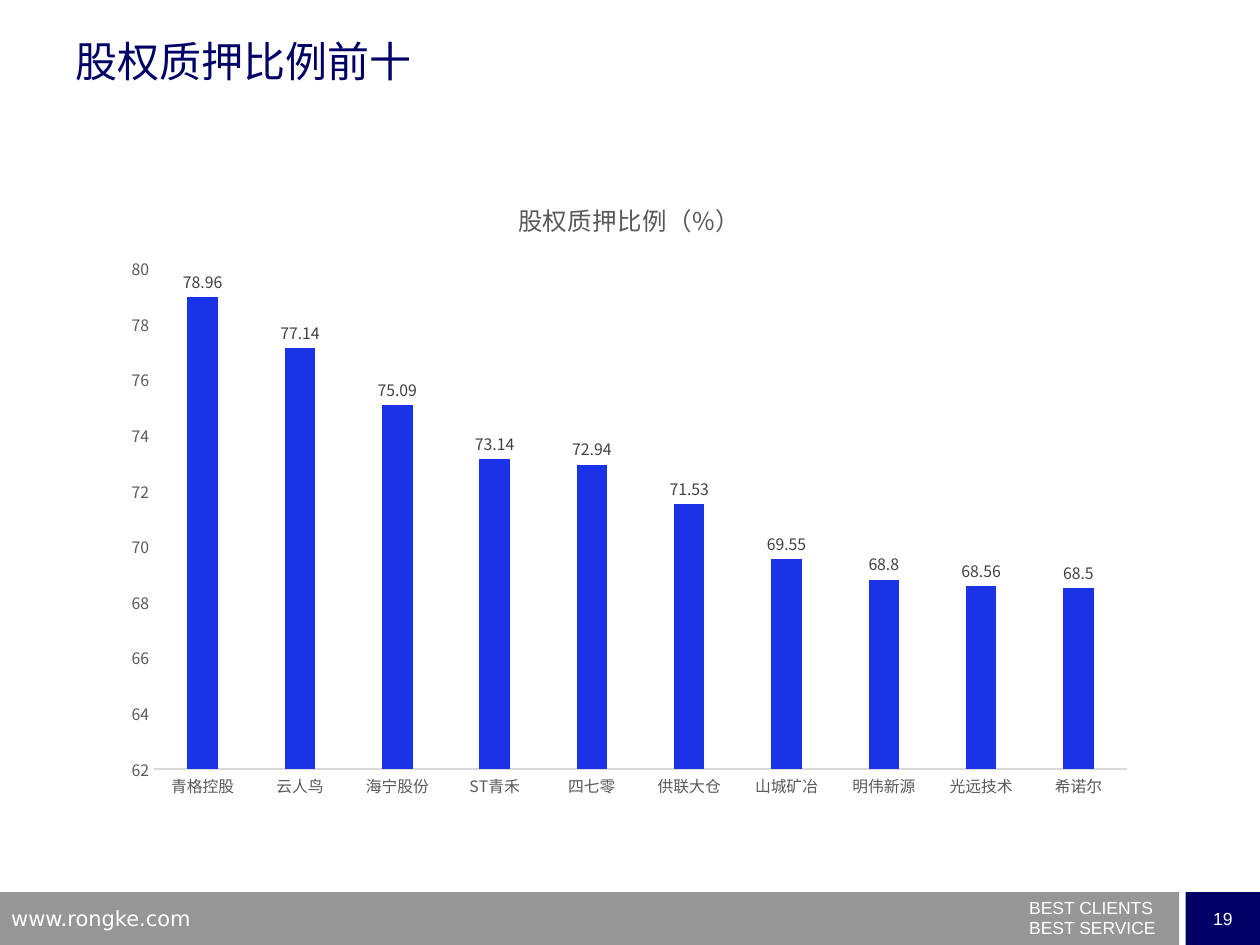
from dataclasses import dataclass

from lxml import etree
from pptx import Presentation
from pptx.chart.data import CategoryChartData
from pptx.dml.color import RGBColor
from pptx.enum.chart import XL_CHART_TYPE, XL_LABEL_POSITION, XL_TICK_MARK
from pptx.enum.shapes import MSO_SHAPE
from pptx.enum.text import MSO_ANCHOR, PP_ALIGN
from pptx.oxml.ns import qn
from pptx.util import Inches, Pt

COLUMN = XL_CHART_TYPE.COLUMN_CLUSTERED
OUT_END = XL_LABEL_POSITION.OUTSIDE_END
NO_TICK = XL_TICK_MARK.NONE
RECT = MSO_SHAPE.RECTANGLE
TOP, MIDDLE = MSO_ANCHOR.TOP, MSO_ANCHOR.MIDDLE
LEFT, CENTER = PP_ALIGN.LEFT, PP_ALIGN.CENTER

COLS, ROWS = 100, 75  # grid of the slide
CELL = Inches(0.1)
HAN, SANS, WIDE = "Noto Sans CJK SC", "Arial", "DejaVu Sans"
NAVY, GRAY, BLUE, WHITE = "000066", "969696", "1B33E7", "FFFFFF"
DARK, MID, PALE = "404040", "595959", "D9D9D9"

RATIOS = {
    "青格控股": 78.96, "云人鸟": 77.14, "海宁股份": 75.09, "ST青禾": 73.14,
    "四七零": 72.94, "供联大仓": 71.53, "山城矿冶": 69.55, "明伟新源": 68.8,
    "光远技术": 68.56, "希诺尔": 68.5,
}


@dataclass
class Box:
    """A place on the grid, in columns and rows."""
    col: float
    row: float
    wide: float
    high: float

    def spot(self) -> tuple:
        return tuple(round(n * CELL) for n in (self.col, self.row, self.wide, self.high))


@dataclass
class Panel:
    box: Box
    fill: str
    text: str = ""


@dataclass
class Label:
    box: Box
    text: str
    font: str
    size: float
    tight: bool = False


FOOT = 70.8
PANELS = [
    Panel(Box(0, FOOT, 93.6, ROWS - FOOT), GRAY),
    Panel(Box(94.1, FOOT, COLS - 94.1, ROWS - FOOT), NAVY, "19"),
]
LABELS = [
    Label(Box(80.7, 71.4, 19.2, 3.5), "BEST CLIENTS\nBEST SERVICE", SANS, 10, True),
    Label(Box(-0.1, 71.4, 24.1, 2.6), "www.rongke.com", WIDE, 12),
]


def color(code: str) -> RGBColor:
    return RGBColor.from_string(code)


def style(font, name: str, size: float, code: str) -> None:
    font.name, font.size, font.bold = name, Pt(size), False
    font.color.rgb = color(code)


def write(frame, text: str, *, font: str = SANS, size: float = 10, code: str = WHITE,
          align=LEFT, anchor=TOP, wrap: bool = True, tight: bool = False) -> None:
    frame.word_wrap, frame.vertical_anchor = wrap, anchor
    for i, line in enumerate(text.split("\n")):
        par = frame.add_paragraph() if i else frame.paragraphs[0]
        par.alignment = align
        if tight:
            par.line_spacing = 0.5
            if i:
                par.space_before = Pt(size * 0.58)
        run = par.add_run()
        run.text = line
        style(run.font, font, size, code)


def panel(slide, part: Panel) -> None:
    shape = slide.shapes.add_shape(RECT, *part.box.spot())
    shape.shadow.inherit = False
    shape.fill.solid()
    shape.fill.fore_color.rgb = color(part.fill)
    shape.line.fill.background()
    if part.text:
        write(shape.text_frame, part.text, align=CENTER, anchor=MIDDLE, wrap=False)


def label(slide, part: Label) -> None:
    frame = slide.shapes.add_textbox(*part.box.spot()).text_frame
    write(frame, part.text, font=part.font, size=part.size, tight=part.tight)


def chart(slide, box: Box) -> None:
    data = CategoryChartData()
    data.categories = list(RATIOS)
    data.add_series("股权质押比例（%）", list(RATIOS.values()))
    graph = slide.shapes.add_chart(COLUMN, *box.spot(), data).chart
    style(graph.font, HAN, 10, "000000")
    graph.has_legend = False
    graph.has_title = True
    write(graph.chart_title.text_frame, "股权质押比例（%）",
          font=HAN, size=14, code=MID, align=CENTER)
    graph.chart_title.include_in_layout = False

    # Axes
    for axis in (graph.category_axis, graph.value_axis):
        axis.major_tick_mark = axis.minor_tick_mark = NO_TICK
        axis.has_major_gridlines = False
        style(axis.tick_labels.font, HAN, 9, MID)
    base = graph.category_axis.format.line
    base.color.rgb, base.width = color(PALE), Pt(0.75)
    scale = graph.value_axis
    scale.format.line.fill.background()
    scale.minimum_scale, scale.maximum_scale, scale.major_unit = 62, 80, 2

    # Bars and their values
    plot = graph.plots[0]
    plot.gap_width, plot.overlap, plot.vary_by_categories = 219, -27, False
    bars = plot.series[0]
    bars.format.fill.solid()
    bars.format.fill.fore_color.rgb = color(BLUE)
    marks = bars.data_labels
    marks.show_value, marks.position = True, OUT_END
    style(marks.font, HAN, 9, DARK)
    add_han(graph.element)


def add_han(root) -> None:
    """Give every East Asian text the font of its Latin text."""
    for latin in list(root.iter(qn("a:latin"))):
        han = etree.Element(qn("a:ea"), typeface=latin.get("typeface"))
        latin.addnext(han)


def main() -> None:
    deck = Presentation()
    deck.slide_width, deck.slide_height = COLS * CELL, ROWS * CELL
    slide = deck.slides.add_slide(deck.slide_layouts[5])

    # Footer
    for part in PANELS:
        panel(slide, part)
    for part in LABELS:
        label(slide, part)

    # Title
    title = slide.shapes.title
    title.left, title.top, title.width, title.height = Box(5, 2.3, 90, 12.5).spot()
    write(title.text_frame, "股权质押比例前十", font=HAN, size=24, code=NAVY)

    # Chart
    chart(slide, Box(8.8, 13.9, 82.3, 50.3))
    add_han(slide.element)
    deck.save("out.pptx")


if __name__ == "__main__":
    main()
